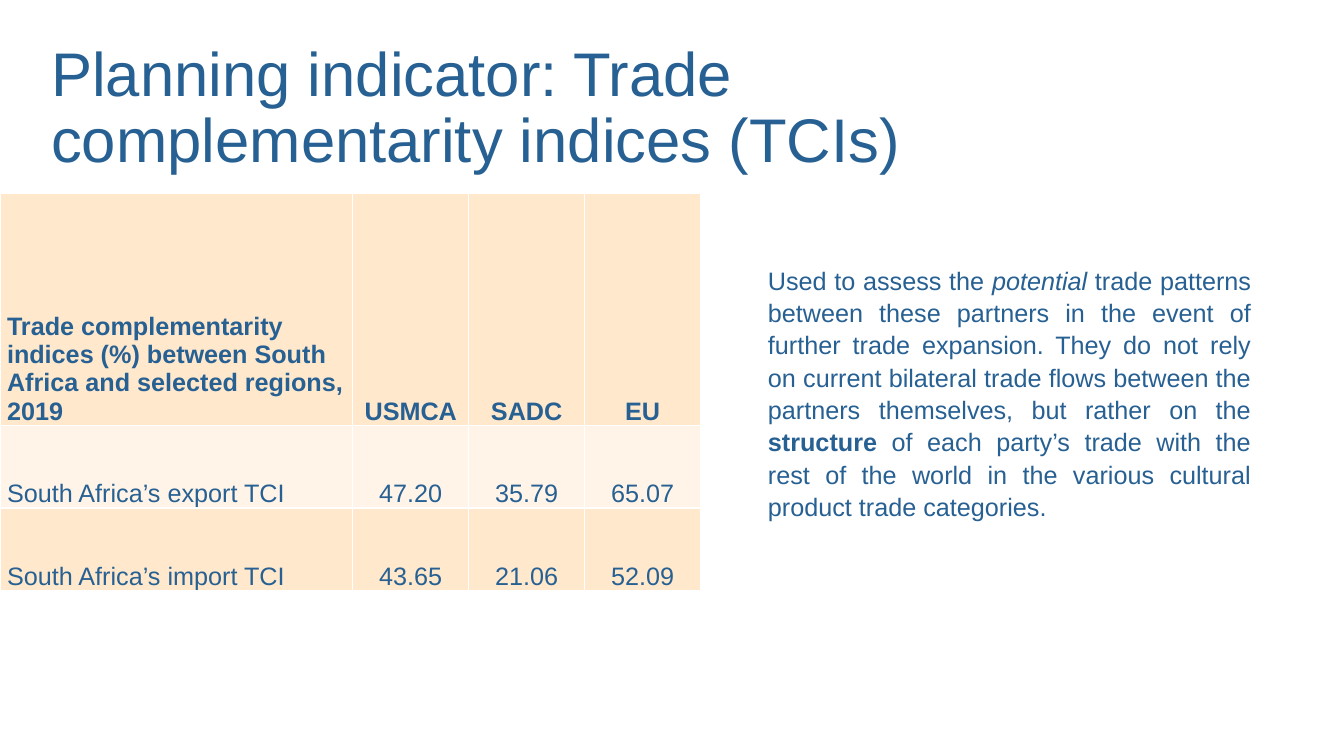
from lxml.etree import SubElement
from pptx import Presentation
from pptx.dml.color import RGBColor
from pptx.enum.text import MSO_ANCHOR as Anchor, MSO_AUTO_SIZE as Fit, PP_ALIGN as Align
from pptx.oxml.ns import qn
from pptx.util import Inches, Pt

COLS, ROWS = 160, 90
CELL = Inches(1) / 12
BLUE, WHITE, PEACH, CREAM = "276092", "FFFFFF", "FFE8CC", "FFF4E7"

HEADS = ["Trade complementarity indices (%) between South Africa and selected regions, 2019",
         "USMCA", "SADC", "EU"]
DATA = [["South Africa’s export TCI", "47.20", "35.79", "65.07"],
        ["South Africa’s import TCI", "43.65", "21.06", "52.09"]]
BODY = [("Used to assess the ", ""),
        ("potential", "i"),
        (" trade patterns between these partners in the event of further trade expansion. "
         "They do not rely on current bilateral trade flows between the partners themselves, "
         "but rather on the ", ""),
        ("structure", "b"),
        (" of each party’s trade with the rest of the world in the various cultural "
         "product trade categories.", "")]


def grid(*units):
    return [round(u * CELL) for u in units]


def paint(target, shade):
    target.solid()
    target.fore_color.rgb = RGBColor.from_string(shade)


class Page:
    """Holds the text style and the slide; lengths are grid columns and rows."""

    def __init__(self, deck, font, ink):
        self.slide = deck.slides.add_slide(deck.slide_layouts[6])
        self.font, self.ink = font, ink

    def style(self, run, size, mark=""):
        font = run.font
        font.name, font.size = self.font, Pt(size)
        font.bold, font.italic = mark == "b", mark == "i"
        paint(font.fill, self.ink)

    def text(self, place, parts, size, lead, align=Align.LEFT, after=0,
             anchor=Anchor.TOP, fit=Fit.NONE):
        frame = self.slide.shapes.add_textbox(*grid(*place)).text_frame
        frame.word_wrap, frame.auto_size = True, fit
        frame.vertical_anchor = anchor
        par = frame.paragraphs[0]
        par.alignment, par.line_spacing, par.space_after = align, lead, Pt(after)
        for words, mark in parts:
            run = par.add_run()
            run.text = words
            self.style(run, size, mark)

    def table(self, left, top, wide, high, rows, size):
        area = grid(left, top, sum(wide), sum(high))
        table = self.slide.shapes.add_table(len(high), len(wide), *area).table
        for col, width in zip(table.columns, grid(*wide)):
            col.width = width
        for row, height in zip(table.rows, grid(*high)):
            row.height = height
        for r, row in enumerate(rows):
            for c, words in enumerate(row):
                self.cell(table.cell(r, c), words, size, r, c)

    def cell(self, cell, words, size, row, col):
        cell.text_frame.text = words
        cell.vertical_anchor = Anchor.BOTTOM
        side = Inches(0.04 if row == 0 and col else 0.07)
        cell.margin_left = cell.margin_right = side
        cell.margin_top = cell.margin_bottom = 0
        par = cell.text_frame.paragraphs[0]
        par.alignment = Align.CENTER if col else Align.LEFT
        par.space_after = Pt(3)
        self.style(par.runs[0], size, "" if row else "b")
        self.border(cell)
        paint(cell.fill, CREAM if row % 2 else PEACH)

    def border(self, cell):
        props = cell._tc.get_or_add_tcPr()
        for edge in ("lnL", "lnR", "lnT", "lnB"):
            line = SubElement(props, qn(f"a:{edge}"), w=str(Pt(1)))
            fill = SubElement(line, qn("a:solidFill"))
            SubElement(fill, qn("a:srgbClr"), val=WHITE)


def main():
    deck = Presentation()
    deck.slide_width, deck.slide_height = grid(COLS, ROWS)
    page = Page(deck, "Arial", BLUE)
    page.text((4.92, 4.32, 138, 17.4),
              [("Planning indicator: Trade complementarity indices (TCIs)", "")],
              44, 0.9, anchor=Anchor.MIDDLE)
    page.text((90.24, 30.72, 59.88, 32.04), BODY, 18, 1.07,
              align=Align.JUSTIFY, after=8, fit=Fit.SHAPE_TO_FIT_TEXT)
    page.table(0, 23.04, [42] + [13.8] * 3, [27.6] + [9.84] * 2, [HEADS] + DATA, 18)
    deck.save("out.pptx")


if __name__ == "__main__":
    main()
